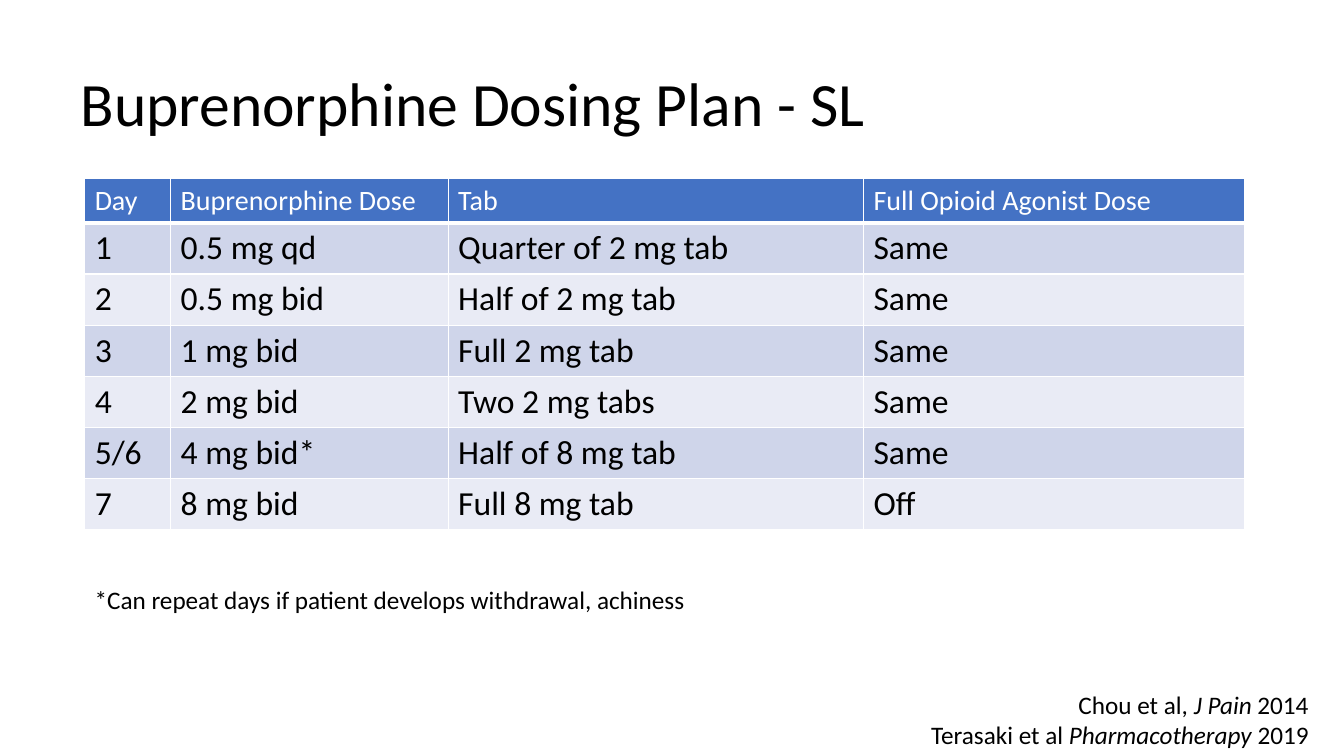
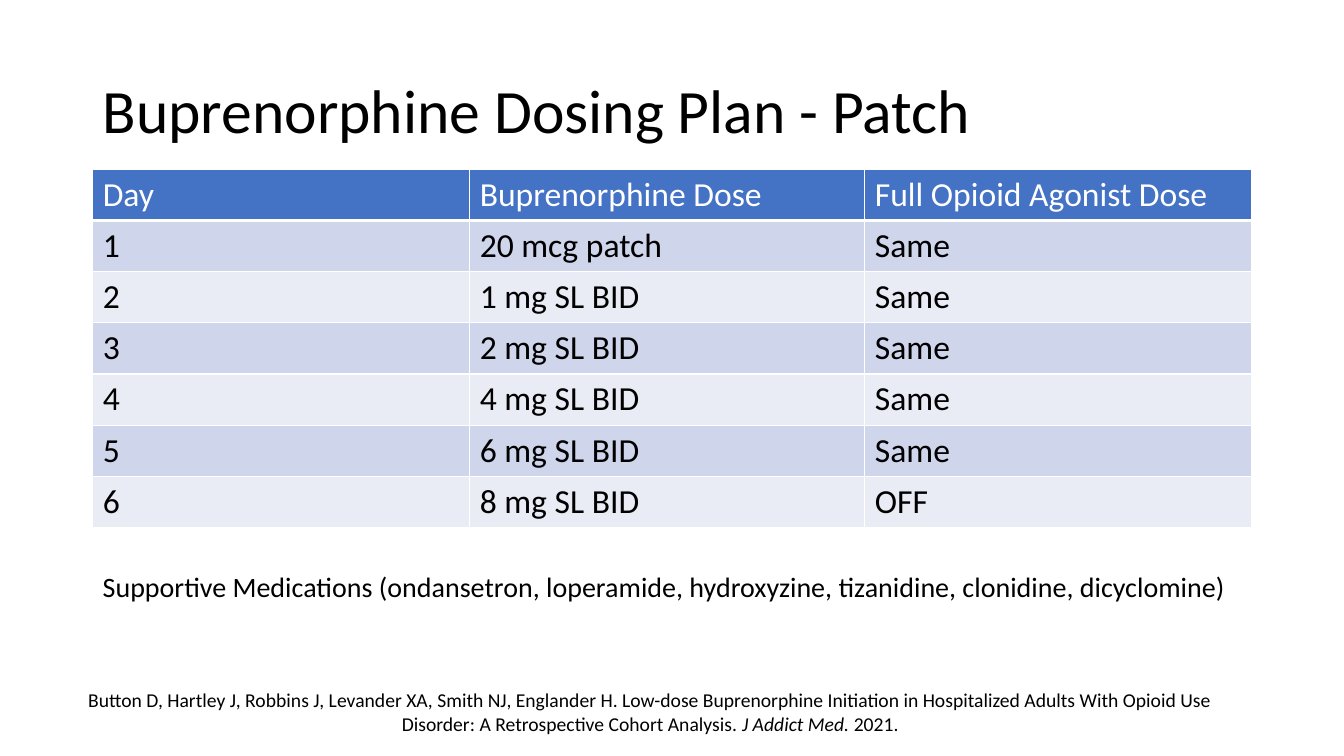
import pptx
import pptx.dml.color
import pptx.enum.text
import pptx.oxml
import pptx.oxml.ns
import pptx.util

ALIGN = pptx.enum.text.PP_ALIGN
ANCHOR = pptx.enum.text.MSO_ANCHOR
AUTO_SIZE = pptx.enum.text.MSO_AUTO_SIZE


def color(value):
    return pptx.dml.color.RGBColor.from_string(value)


class Deck:
    FONT = "Calibri"
    INK = "000000"
    PAPER = "FFFFFF"
    HEADER = "4472C4"
    BANDS = ("CFD5EA", "E9EBF5")
    TITLE_SIZE = 44
    BODY_SIZE = 24
    ROW_HEIGHT = 6.77

    def __init__(self):
        self.presentation = pptx.Presentation()
        self.presentation.slide_width = pptx.util.Inches(13.33)
        self.presentation.slide_height = pptx.util.Inches(7.5)
        self.slide = None

    def across(self, percent):
        return round(self.presentation.slide_width * percent / 100)

    def down(self, percent):
        return round(self.presentation.slide_height * percent / 100)

    def box(self, left, top, width, height):
        return self.across(left), self.down(top), self.across(width), self.down(height)

    def add_run(self, paragraph, text, size, ink=INK, italic=False):
        run = paragraph.add_run()
        run.text = text
        run.font.name = self.FONT
        run.font.size = pptx.util.Pt(size)
        run.font.bold = False
        run.font.italic = italic
        run.font.color.rgb = color(ink)

    def start_slide(self, title, area):
        layout = self.presentation.slide_layouts.get_by_name("Title Only")
        self.slide = self.presentation.slides.add_slide(layout)
        shape = self.slide.shapes.title
        shape.left, shape.top, shape.width, shape.height = self.box(*area)
        frame = shape.text_frame
        frame.word_wrap = True
        frame.auto_size = AUTO_SIZE.NONE
        frame.vertical_anchor = ANCHOR.MIDDLE
        paragraph = frame.paragraphs[0]
        paragraph.alignment = ALIGN.LEFT
        paragraph.line_spacing = 0.9
        self.add_run(paragraph, title, self.TITLE_SIZE)

    def add_text(self, paragraphs, area, size, alignment=ALIGN.LEFT):
        frame = self.slide.shapes.add_textbox(*self.box(*area)).text_frame
        frame.word_wrap = True
        frame.auto_size = AUTO_SIZE.SHAPE_TO_FIT_TEXT
        for index, runs in enumerate(paragraphs):
            paragraph = frame.add_paragraph() if index else frame.paragraphs[0]
            paragraph.alignment = alignment
            for text, italic in runs:
                self.add_run(paragraph, text, size, italic=italic)

    def add_borders(self, cell, bottom):
        properties = cell._tc.get_or_add_tcPr()
        for side, width in (("L", 1), ("R", 1), ("T", 1), ("B", bottom)):
            properties.append(pptx.oxml.parse_xml(
                f'<a:ln{side} {pptx.oxml.ns.nsdecls("a")} w="{pptx.util.Pt(width)}">'
                f'<a:solidFill><a:srgbClr val="{self.PAPER}"/></a:solidFill></a:ln{side}>'))

    def add_table(self, rows, left, top, columns, header_size=BODY_SIZE, header_height=ROW_HEIGHT):
        heights = [header_height] + [self.ROW_HEIGHT] * (len(rows) - 1)
        area = self.box(left, top, sum(columns), sum(heights))
        table = self.slide.shapes.add_table(len(rows), len(columns), *area).table
        table.horz_banding = False
        for column, width in zip(table.columns, columns):
            column.width = self.across(width)
        for row_index, texts in enumerate(rows):
            table.rows[row_index].height = self.down(heights[row_index])
            if row_index == 0:
                fill, ink, size, bottom = self.HEADER, self.PAPER, header_size, 3
            else:
                fill, ink, size, bottom = self.BANDS[(row_index - 1) % 2], self.INK, self.BODY_SIZE, 1
            for column_index, text in enumerate(texts):
                cell = table.cell(row_index, column_index)
                self.add_borders(cell, bottom)
                cell.fill.solid()
                cell.fill.fore_color.rgb = color(fill)
                self.add_run(cell.text_frame.paragraphs[0], text, size, ink)


def add_sublingual_plan(deck):
    deck.start_slide("Buprenorphine Dosing Plan - SL", (5.25, 7.33, 86.25, 13.47))
    deck.add_table([
        ("Day", "Buprenorphine Dose", "Tab", "Full Opioid Agonist Dose"),
        ("1", "0.5 mg qd", "Quarter of 2 mg tab", "Same"),
        ("2", "0.5 mg bid", "Half of 2 mg tab", "Same"),
        ("3", "1 mg bid", "Full 2 mg tab", "Same"),
        ("4", "2 mg bid", "Two 2 mg tabs", "Same"),
        ("5/6", "4 mg bid*", "Half of 8 mg tab", "Same"),
        ("7", "8 mg bid", "Full 8 mg tab", "Off"),
    ], 6.3, 23.6, (6.4, 20.65, 30.9, 28.35), header_size=20, header_height=5.76)
    deck.add_text(
        [[("*Can repeat days if patient develops withdrawal, achiness", False)]],
        (6.3, 76.67, 84.1, 5.33), 18)
    deck.add_text([
        [("Chou et al, ", False), ("J Pain", True), (" 2014", False)],
        [("Terasaki et al ", False), ("Pharmacotherapy ", True), ("2019", False)],
    ], (9.6, 90.53, 88.5, 9.47), 18, ALIGN.RIGHT)


def add_patch_plan(deck):
    deck.start_slide("Buprenorphine Dosing Plan - Patch", (6.9, 5.33, 86.25, 19.33))
    deck.add_table([
        ("Day", "Buprenorphine Dose", "Full Opioid Agonist Dose"),
        ("1", "20 mcg patch", "Same"),
        ("2", "1 mg SL BID", "Same"),
        ("3", "2 mg SL BID", "Same"),
        ("4", "4 mg SL BID", "Same"),
        ("5", "6 mg SL BID", "Same"),
        ("6", "8 mg SL BID", "OFF"),
    ], 6.9, 22.4, (28.05, 29.4, 28.75))
    deck.add_text(
        [[("Supportive Medications (ondansetron, loperamide, hydroxyzine, "
           "tizanidine, clonidine, dicyclomine)", False)]],
        (6.9, 74.67, 89.3, 5.87), 20)
    deck.add_text([[
        ("Button D, Hartley J, Robbins J, Levander XA, Smith NJ, Englander H. "
         "Low-dose Buprenorphine Initiation in Hospitalized Adults With Opioid Use "
         "Disorder: A Retrospective Cohort Analysis. ", False),
        ("J Addict Med. ", True),
        ("2021.", False),
    ]], (3.1, 90.4, 90.55, 7.6), 14, ALIGN.CENTER)


def main():
    deck = Deck()
    add_sublingual_plan(deck)
    add_patch_plan(deck)
    deck.presentation.save("out.pptx")


if __name__ == "__main__":
    main()
